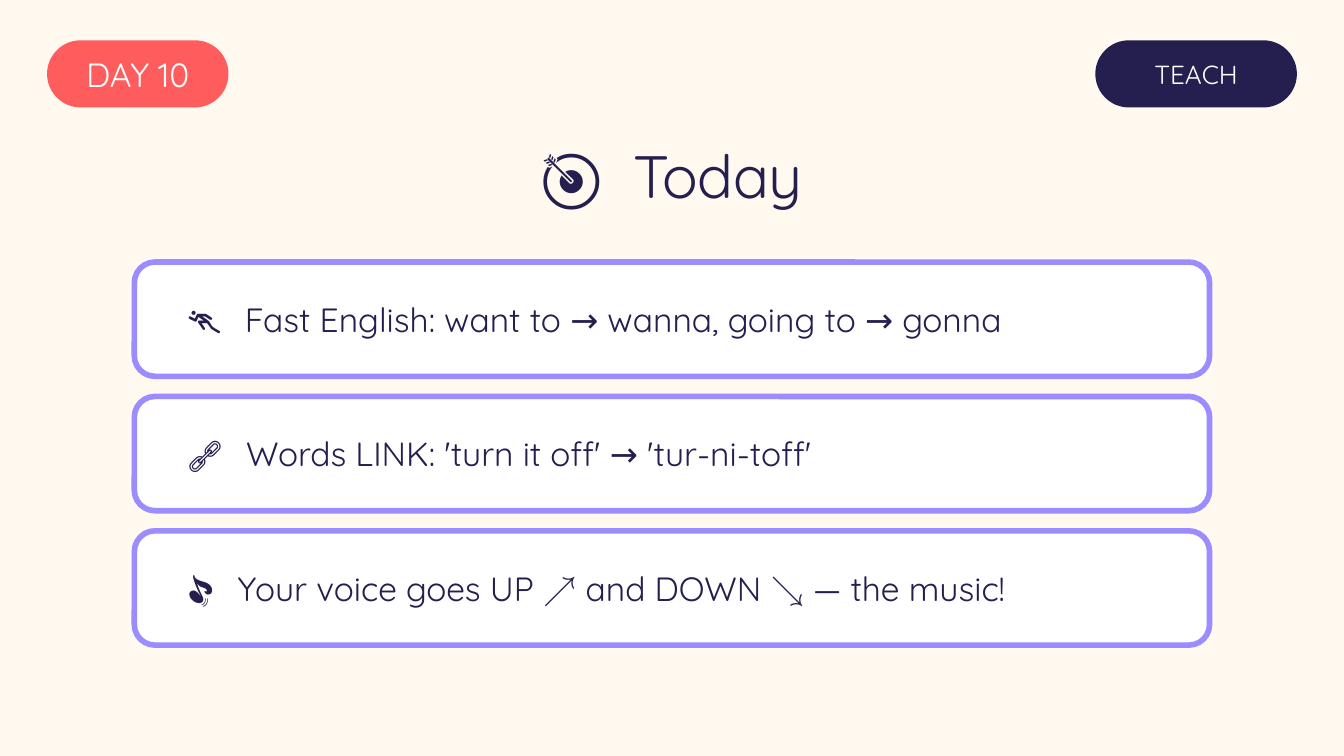
from pptx import Presentation
from pptx.dml.color import RGBColor
from pptx.enum.shapes import MSO_SHAPE
from pptx.enum.text import MSO_ANCHOR, MSO_AUTO_SIZE, PP_ALIGN
from pptx.util import Pt

CREAM = RGBColor(0xFF, 0xF9, 0xEF)
CORAL = RGBColor(0xFF, 0x5D, 0x5D)
NAVY = RGBColor(0x24, 0x1F, 0x4E)
LILAC = RGBColor(0x9B, 0x8C, 0xFF)
WHITE = RGBColor(0xFF, 0xFF, 0xFF)
ICON_GAP = 8  # extra points after an icon


def rounded_box(left, top, width, height, corner, fill):
    box = slide.shapes.add_shape(MSO_SHAPE.ROUNDED_RECTANGLE,
                                 Pt(left), Pt(top), Pt(width), Pt(height))
    box.adjustments[0] = corner
    box.shadow.inherit = False
    box.fill.solid()
    box.fill.fore_color.rgb = fill
    box.line.fill.background()
    return box


def write(box, words, size, color, align, margins, icon=None):
    frame = box.text_frame
    frame_format = {"word_wrap": True, "auto_size": MSO_AUTO_SIZE.NONE,
                    "vertical_anchor": MSO_ANCHOR.MIDDLE, **margins}
    for name, value in frame_format.items():
        setattr(frame, name, value)
    paragraph = frame.paragraphs[0]
    paragraph.alignment = align
    for part in (icon, " ", words) if icon else (words,):
        run = paragraph.add_run()
        run.text = part
        font_format = {"name": "Quicksand", "size": Pt(size), "bold": False}
        for name, value in font_format.items():
            setattr(run.font, name, value)
        run.font.color.rgb = color
        if part == " ":
            run.font._element.set("spc", str(ICON_GAP * 100))


prs = Presentation()
prs.slide_width, prs.slide_height = Pt(720), Pt(405)
slide = prs.slides.add_slide(prs.slide_layouts[5])
slide.background.fill.solid()
slide.background.fill.fore_color.rgb = CREAM

# Day and stage badges
no_margins = {f"margin_{side}": 0 for side in ("left", "top", "right", "bottom")}
for label, left, width, size, fill in (("DAY 10", 25.2, 97.2, 18, CORAL),
                                       ("TEACH", 586.8, 108, 14, NAVY)):
    badge = rounded_box(left, 21.6, width, 36, 0.5, fill)
    write(badge, label, size, WHITE, PP_ALIGN.CENTER, no_margins)

# Title
title = slide.shapes.title
title_place = {"left": 0, "top": 68.4, "width": 720, "height": 50.4}
for name, value in title_place.items():
    setattr(title, name, Pt(value))
write(title, "Today", 32, NAVY, PP_ALIGN.CENTER, {}, icon="🎯")

# Goal cards
goals = (("🏃", "Fast English: want to → wanna, going to → gonna"),
         ("🔗", "Words LINK: 'turn it off' → 'tur-ni-toff'"),
         ("🎵", "Your voice goes UP ↗ and DOWN ↘ — the music!"))
for row, (icon, goal) in enumerate(goals):
    card = rounded_box(72, 140.4 + 72 * row, 576, 61.2, 0.18, WHITE)
    card.line.color.rgb = LILAC
    card.line.width = Pt(3)
    write(card, goal, 18, NAVY, PP_ALIGN.LEFT, {"margin_left": Pt(25.6)}, icon)

prs.save("out.pptx")
